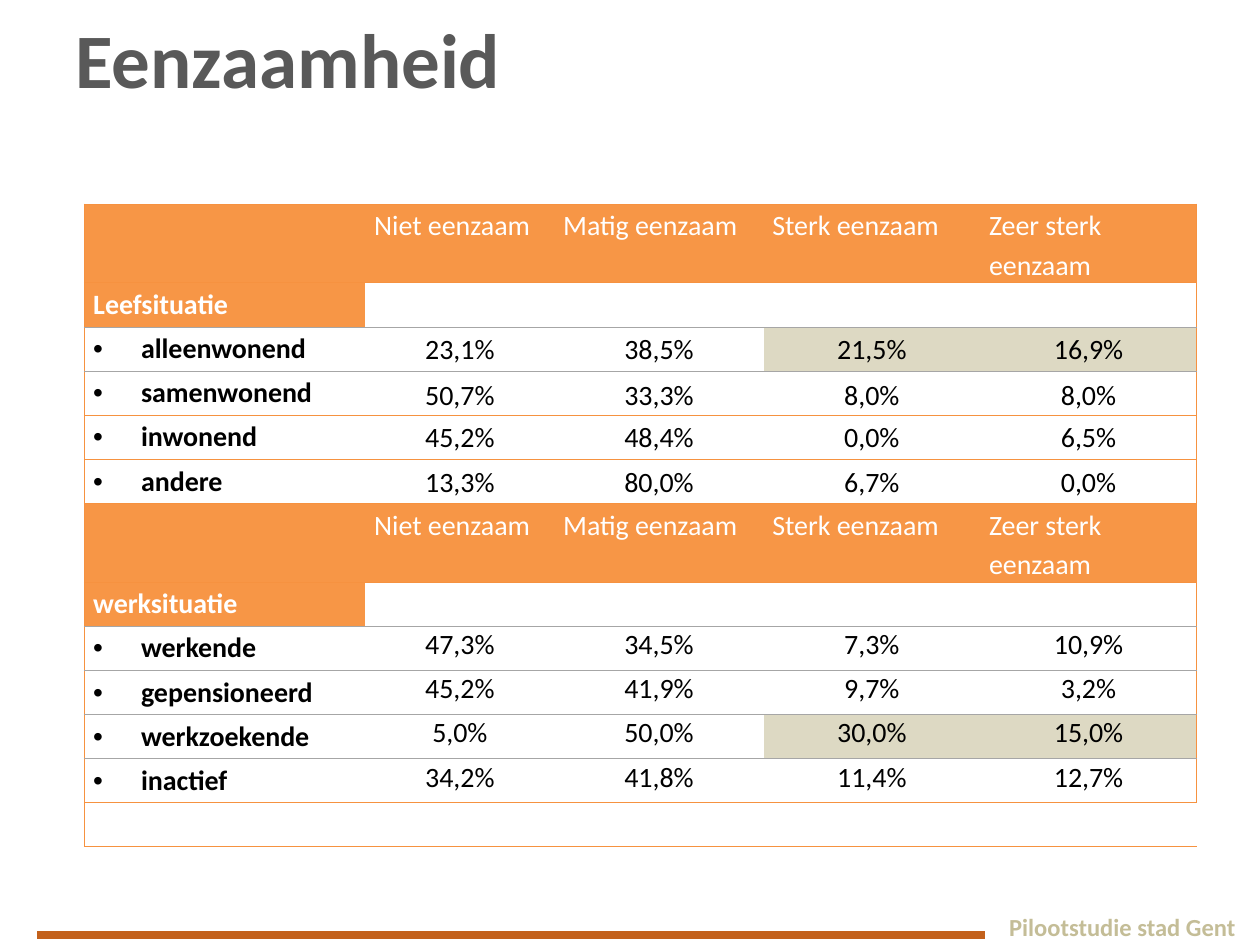
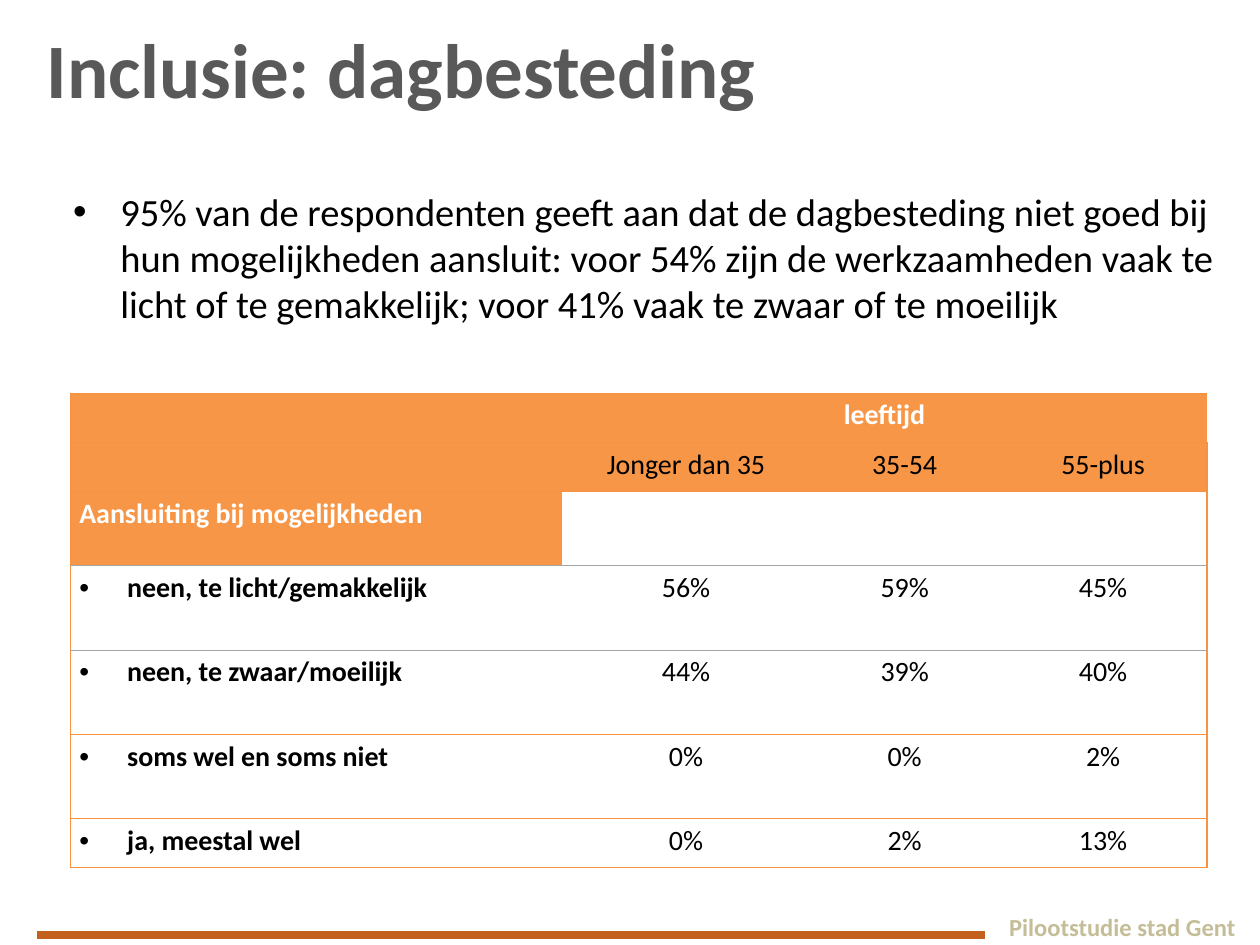
from dataclasses import dataclass

from lxml.etree import SubElement
from pptx import Presentation
from pptx.dml.color import RGBColor
from pptx.enum.shapes import MSO_SHAPE
from pptx.enum.text import MSO_ANCHOR, MSO_AUTO_SIZE, PP_ALIGN
from pptx.oxml.ns import qn
from pptx.util import Inches, Pt

COLOURS = {
    "title": "595959",
    "header": "F79646",
    "border": "F69240",
    "divider": "A6A6A6",
    "highlight": "DDD9C3",
    "band": "C3611C",
    "footer": "C4BD97",
    "white": "FFFFFF",
    "black": "000000",
}
FONT = "Calibri"
PLAIN_TABLE_STYLE = "{2D5ABB26-0587-4C30-8999-92F81FD0307C}"
LONELINESS_LEVELS = ["Niet eenzaam", "Matig eenzaam", "Sterk eenzaam", "Zeer sterk eenzaam"]


@dataclass
class Row:
    """One table row with its look and the rule below it."""

    label: str
    values: list
    height: float = 0.35
    fill: str = "white"
    label_colour: str = "black"
    value_colour: str = "black"
    bullet: bool = False
    bold_values: bool = False
    value_align: PP_ALIGN = PP_ALIGN.CENTER
    anchor: MSO_ANCHOR = MSO_ANCHOR.TOP
    spacing: object = 1.15
    highlighted: tuple = ()
    rule: str = "border"


def rgb(colour):
    """Return the named colour."""
    return RGBColor.from_string(COLOURS[colour])


def place(part, box):
    """Move a part to its box in inches."""
    part.left, part.top, part.width, part.height = map(Inches, box)


def style_text(paragraph, size, colour, bold=False):
    """Format every run of a paragraph."""
    for run in paragraph.runs:
        run.font.name = FONT
        run.font.size = Pt(size)
        run.font.bold = bold
        run.font.color.rgb = rgb(colour)


def add_bullet(paragraph):
    """Give a paragraph a hanging bullet."""
    properties = paragraph._p.get_or_add_pPr()
    properties.set("marL", str(Inches(0.38)))
    properties.set("indent", str(-Inches(0.38)))
    SubElement(properties, qn("a:buFont")).set("typeface", "Arial")
    SubElement(properties, qn("a:buChar")).set("char", "•")


def add_border(cell, side, colour):
    """Draw one side of a cell: L, R, T or B."""
    line = SubElement(cell._tc.get_or_add_tcPr(), qn(f"a:ln{side}"))
    line.set("w", str(Pt(0.75 if colour == "border" else 0.5)))
    solid = SubElement(line, qn("a:solidFill"))
    SubElement(solid, qn("a:srgbClr")).set("val", COLOURS[colour])


def write_cell(cell, text, row, is_label):
    """Write and format the text of a cell."""
    cell.margin_left = cell.margin_right = Inches(0.07)
    cell.margin_top = cell.margin_bottom = 0
    if not text:
        return
    cell.text_frame.text = text
    paragraph = cell.text_frame.paragraphs[0]
    if is_label:
        if row.bullet:
            add_bullet(paragraph)
        paragraph.line_spacing = 1.15
        style_text(paragraph, 16, row.label_colour, True)
    else:
        cell.vertical_anchor = row.anchor
        paragraph.alignment = row.value_align
        paragraph.line_spacing = row.spacing
        style_text(paragraph, 16, row.value_colour, row.bold_values)


def add_survey_table(slide, left, top, widths, rows):
    """Add a framed table of survey results."""
    heights = [row.height for row in rows]
    frame = slide.shapes.add_table(
        len(rows), len(widths), Inches(left), Inches(top),
        Inches(sum(widths)), Inches(sum(heights)))
    for style in frame.element.iter(qn("a:tableStyleId")):
        style.text = PLAIN_TABLE_STYLE
    table = frame.table
    for column, width in zip(table.columns, widths):
        column.width = Inches(width)
    last = len(widths) - 1
    rule_above = "border"
    for r, row in enumerate(rows):
        table.rows[r].height = Inches(row.height)
        texts = [row.label, *row.values]
        texts += [""] * (len(widths) - len(texts))
        for c, text in enumerate(texts):
            cell = table.cell(r, c)
            if c == 0:
                add_border(cell, "L", "border")
            if c == last:
                add_border(cell, "R", "border")
            add_border(cell, "T", rule_above)
            add_border(cell, "B", row.rule)
            is_header = row.label_colour == "white" and c == 0
            fill = "header" if is_header else "highlight" if c in row.highlighted else row.fill
            cell.fill.solid()
            cell.fill.fore_color.rgb = rgb(fill)
            write_cell(cell, text, row, c == 0)
        rule_above = row.rule
    return table


def header_row(values, **look):
    """Return an orange row of column names."""
    return Row("", values, fill="header", **look)


def section_row(label, **look):
    """Return a row that names a group of answers."""
    return Row(label, [], label_colour="white", rule="divider", **look)


def answer_row(label, values, **look):
    """Return a bulleted row of percentages."""
    return Row(label, values.split(), bullet=True, **look)


def add_title(slide, text, box):
    """Fill the title placeholder."""
    title = slide.shapes.title
    place(title, box)
    frame = title.text_frame
    frame.text = text
    frame.auto_size = MSO_AUTO_SIZE.NONE
    frame.vertical_anchor = MSO_ANCHOR.MIDDLE
    frame.paragraphs[0].alignment = PP_ALIGN.LEFT
    style_text(frame.paragraphs[0], 44, "title", True)


def add_master_footer(prs, slide):
    """Build the footer band and move it to the slide master."""
    parts = []
    for box, fill in [((0.28, 7.37, 8.43, 0.1), "band"), ((7.83, 7.3, 1.89, 0.2), "white")]:
        band = slide.shapes.add_shape(MSO_SHAPE.RECTANGLE, *map(Inches, box))
        band.shadow.inherit = False
        band.fill.solid()
        band.fill.fore_color.rgb = rgb(fill)
        band.line.color.rgb = rgb("white")
        band.line.width = Pt(2.25)
        parts.append(band)
    study = slide.shapes.add_textbox(*map(Inches, (7.91, 7.19, 2.05, 0.34)))
    study.text_frame.text = "Pilootstudie stad Gent"
    style_text(study.text_frame.paragraphs[0], 14, "footer", True)
    parts.append(study)
    for number, part in enumerate(parts, 20):
        part.element.nvSpPr.cNvPr.set("id", str(number))
        prs.slide_master.element.cSld.spTree.append(part.element)


def build_loneliness(prs):
    """Build the slide on loneliness by living and work situation."""
    slide = prs.slides.add_slide(prs.slide_layouts[5])
    add_master_footer(prs, slide)
    add_title(slide, "Eenzaamheid", (0.5, 0, 9, 0.92))
    header = header_row(LONELINESS_LEVELS, height=0.62, value_colour="white",
                        value_align=PP_ALIGN.LEFT)
    living = {"anchor": MSO_ANCHOR.MIDDLE, "spacing": 1.07}
    work = {"anchor": MSO_ANCHOR.MIDDLE, "spacing": Pt(16)}
    rows = [
        header,
        section_row("Leefsituatie"),
        answer_row("alleenwonend", "23,1% 38,5% 21,5% 16,9%", highlighted=(3, 4),
                   rule="divider", **living),
        answer_row("samenwonend", "50,7% 33,3% 8,0% 8,0%", anchor=MSO_ANCHOR.MIDDLE),
        answer_row("inwonend", "45,2% 48,4% 0,0% 6,5%", **living),
        answer_row("andere", "13,3% 80,0% 6,7% 0,0%", **living),
        header,
        section_row("werksituatie"),
        answer_row("werkende", "47,3% 34,5% 7,3% 10,9%", rule="divider", **work),
        answer_row("gepensioneerd", "45,2% 41,9% 9,7% 3,2%", rule="divider", **work),
        answer_row("werkzoekende", "5,0% 50,0% 30,0% 15,0%", highlighted=(3, 4),
                   rule="divider", **work),
        answer_row("inactief", "34,2% 41,8% 11,4% 12,7%", **work),
        Row("", []),
    ]
    table = add_survey_table(slide, 0.67, 1.62, [2.23, 1.5, 1.66, 1.72, 1.72], rows)
    table.cell(12, 1).merge(table.cell(12, 4))


def build_day_activities(prs):
    """Build the slide on day activities by age."""
    slide = prs.slides.add_slide(prs.slide_layouts[1])
    add_title(slide, "Inclusie: dagbesteding", (0.27, 0, 9.27, 1.07))
    finding = slide.placeholders[1]
    place(finding, (0.48, 1.44, 9.33, 1.5))
    finding.text_frame.text = (
        "95% van de respondenten geeft aan dat de dagbesteding niet goed bij hun "
        "mogelijkheden aansluit: voor 54% zijn de werkzaamheden vaak te licht of te "
        "gemakkelijk; voor 41% vaak te zwaar of te moeilijk")
    finding.text_frame.auto_size = MSO_AUTO_SIZE.NONE
    paragraph = finding.text_frame.paragraphs[0]
    paragraph.space_before = Pt(0)
    style_text(paragraph, 22, "black")
    rows = [
        header_row(["leeftijd"], height=0.39, value_colour="white", bold_values=True),
        header_row(["Jonger dan 35", "35-54", "55-plus"], height=0.39),
        section_row("Aansluiting bij mogelijkheden", height=0.59),
        answer_row("neen, te licht/gemakkelijk", "56% 59% 45%", height=0.67, rule="divider"),
        answer_row("neen, te zwaar/moeilijk", "44% 39% 40%", height=0.67),
        answer_row("soms wel en soms niet", "0% 0% 2%", height=0.67),
        answer_row("ja, meestal wel", "0% 2% 13%", height=0.39),
    ]
    table = add_survey_table(slide, 0.56, 3.12, [3.9, 1.97, 1.5, 1.65], rows)
    table.cell(0, 1).merge(table.cell(0, 3))


def main():
    """Build and save the presentation."""
    prs = Presentation()
    prs.slide_width, prs.slide_height = Inches(10), Inches(7.5)
    build_loneliness(prs)
    build_day_activities(prs)
    prs.save("out.pptx")


if __name__ == "__main__":
    main()
